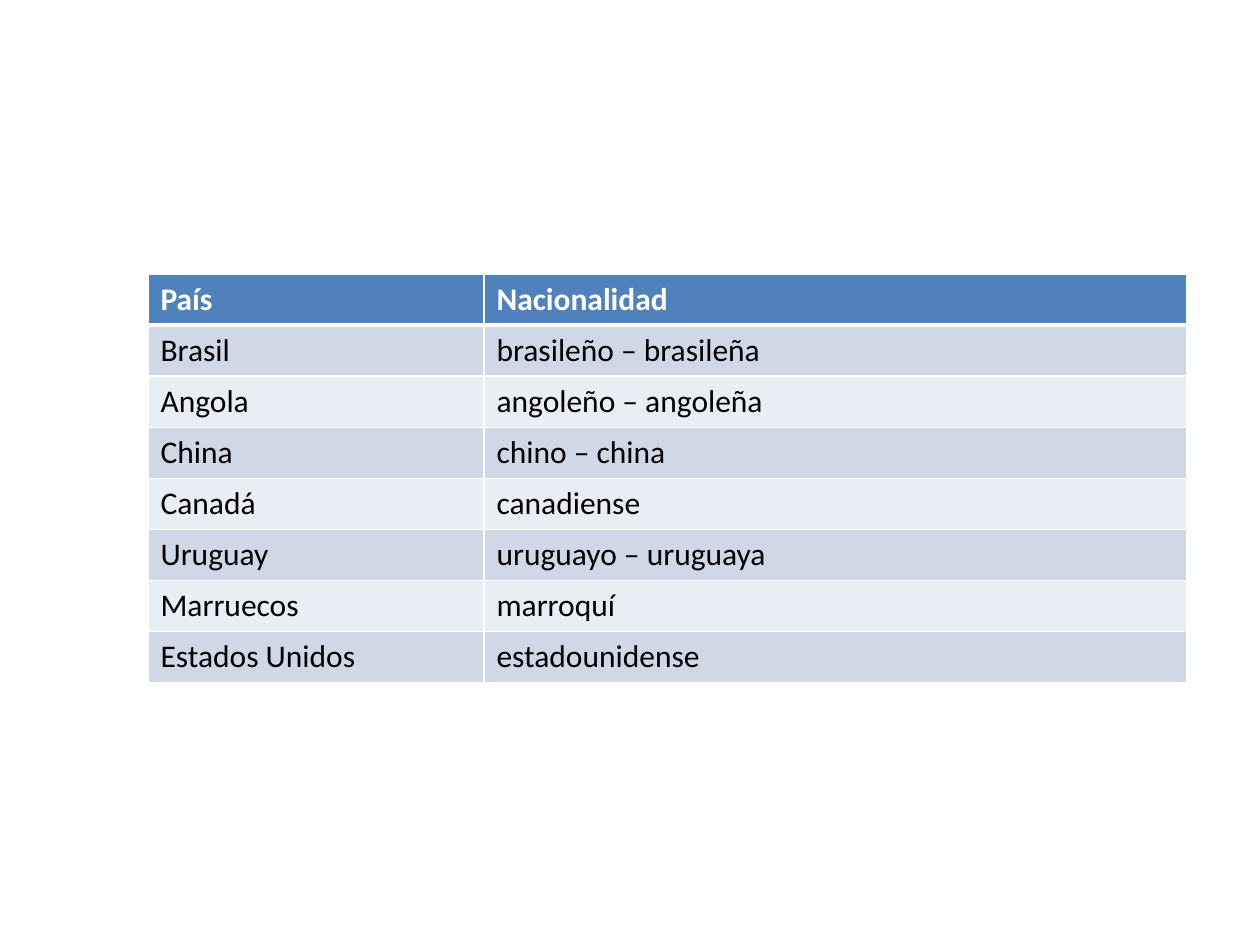
from lxml import etree
from pptx import Presentation
from pptx.dml.color import RGBColor
from pptx.oxml.ns import qn
from pptx.util import Pt

PX = 914400 // 126
HUES = {"head": "4F81BD", "odd": "D0D8E8", "even": "E9EDF4",
        "line": "FFFFFF", "light": "FFFFFF", "dark": "000000"}
ROWS = [
    ("País", "Nacionalidad"),
    ("Brasil", "brasileño – brasileña"),
    ("Angola", "angoleño – angoleña"),
    ("China", "chino – china"),
    ("Canadá", "canadiense"),
    ("Uruguay", "uruguayo – uruguaya"),
    ("Marruecos", "marroquí"),
    ("Estados Unidos", "estadounidense"),
]


def hue(name):
    return RGBColor.from_string(HUES[name])


def add_lines(cell, wide):
    props = cell._tc.get_or_add_tcPr()
    for side in "LRTB":
        size = Pt(3 if side in wide else 1)
        line = etree.SubElement(props, qn("a:ln" + side), w=str(size))
        fill = etree.SubElement(line, qn("a:solidFill"))
        etree.SubElement(fill, qn("a:srgbClr"), val=HUES["line"])


def fill_cell(cell, text, row):
    add_lines(cell, {0: "B", 1: "T"}.get(row, ""))
    cell.fill.solid()
    band = "head" if row == 0 else "odd" if row % 2 else "even"
    cell.fill.fore_color.rgb = hue(band)
    run = cell.text_frame.paragraphs[0].add_run()
    run.text = text
    run.font.name = "Calibri"
    run.font.size = Pt(18)
    run.font.bold = row == 0
    run.font.color.rgb = hue("light" if row == 0 else "dark")


def add_grid(slide, left, top, width, height):
    first = 336
    frame = slide.shapes.add_table(
        len(ROWS), 2, left * PX, top * PX, width * PX, height * PX)
    table = frame.table
    table.columns[0].width = first * PX
    table.columns[1].width = (width - first) * PX
    for row, texts in enumerate(ROWS):
        table.rows[row].height = 47 * PX
        for col, text in enumerate(texts):
            fill_cell(table.cell(row, col), text, row)
    frame.height = height * PX


def main():
    deck = Presentation()
    deck.slide_width = 1260 * PX
    deck.slide_height = 945 * PX
    slide = deck.slides.add_slide(deck.slide_layouts[6])
    add_grid(slide, 148, 274, 1039, 403)
    deck.save("out.pptx")


if __name__ == "__main__":
    main()
